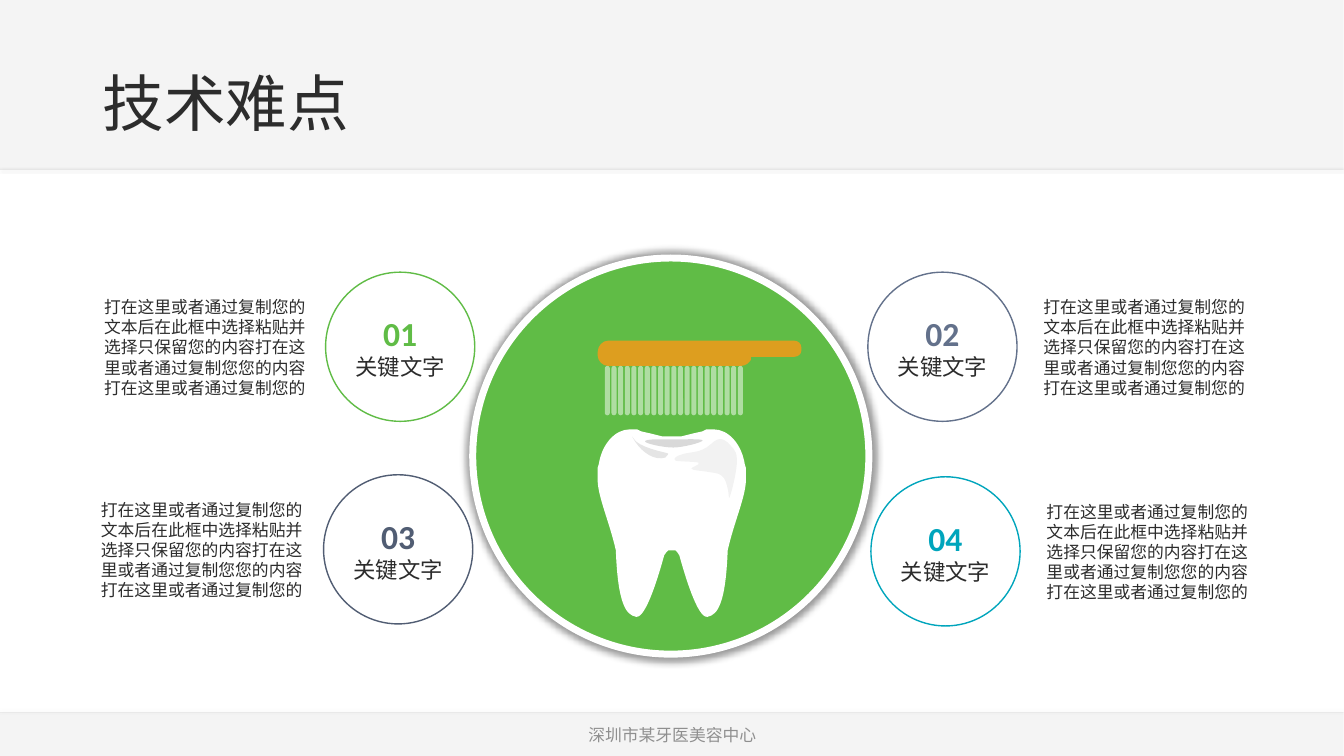
from dataclasses import dataclass

from lxml import etree
from pptx import Presentation
from pptx.dml.color import RGBColor
from pptx.enum.shapes import MSO_CONNECTOR, MSO_SHAPE
from pptx.enum.text import MSO_ANCHOR, MSO_AUTO_SIZE, PP_ALIGN
from pptx.oxml.ns import qn
from pptx.util import Pt

PX = 9144
RECT, OVAL, ROUNDED = MSO_SHAPE.RECTANGLE, MSO_SHAPE.OVAL, MSO_SHAPE.ROUNDED_RECTANGLE
STRAIGHT = MSO_CONNECTOR.STRAIGHT
MIDDLE, BOTTOM = MSO_ANCHOR.MIDDLE, MSO_ANCHOR.BOTTOM
GROW = MSO_AUTO_SIZE.SHAPE_TO_FIT_TEXT
LEFT, CENTER, RIGHT = PP_ALIGN.LEFT, PP_ALIGN.CENTER, PP_ALIGN.RIGHT


@dataclass(frozen=True)
class Theme:
    """Colours, fonts and type sizes of the deck."""
    ink: str = "2C2C2C"
    white: str = "FFFFFF"
    black: str = "000000"
    green: str = "60BC46"
    slate: str = "63718B"
    navy: str = "515D73"
    teal: str = "00A5BC"
    orange: str = "DD9E1F"
    latin: str = "Calibri"
    asian: str = "Noto Sans CJK SC"
    title: int = 44
    number: int = 24
    keyword: int = 16
    body: int = 12


THEME = Theme()
CAPTION = "打在这里或者通过复制您的文本后在此框中选择粘贴并选择只保留您的内容打在这里或者通过复制您您的内容打在这里或者通过复制您的"
CARDS = [
    ("01", THEME.green, (89, 270, 382, 148), True),
    ("02", THEME.slate, (861, 270, 384, 148), False),
    ("03", THEME.navy, (86, 471, 383, 148), True),
    ("04", THEME.teal, (864, 473, 384, 148), False),
]
HANDLE = [
    (10, 0), (195, 0), (199, 0, 202, 3, 202, 7), (202, 10), (202, 13, 199, 16, 195, 16),
    (152, 16), (152, 19), (150, 22, 147, 25, 142, 25), (10, 25), (5, 25, 0, 20, 0, 15),
    (0, 11), (0, 5, 5, 0, 10, 0),
]
TOOTH_HALF = [
    (74, 7), (64, 7), (52, 4), (43, 2), (39, 0), (37, 0, 35, 0, 32, 0),
    (17, 0, 4, 15, 1, 35), (0, 38), (0, 52), (1, 69, 12, 93, 18, 120),
    (20, 173, 28, 184, 38, 186), (48, 188, 61, 143, 66, 125), (68, 122), (70, 120), (74, 120),
]
TOOTH_SHADES = [
    (10, [(34, 7), (38, 12), (48, 20, 69, 23, 70, 24), (71, 24, 67, 28, 67, 28),
          (57, 31, 45, 24, 37, 12)]),
    (15, [(47, 12), (47, 9, 65, 10, 75, 10), (84, 10, 104, 9, 104, 11),
          (104, 13, 84, 18, 75, 18), (65, 18, 47, 14, 47, 12)]),
    (5, [(83, 25), (88, 23, 98, 23, 104, 20), (110, 18, 115, 11, 119, 10),
         (123, 9, 125, 10, 129, 13), (132, 17, 138, 20, 138, 29),
         (139, 38, 133, 62, 131, 67), (130, 72, 130, 62, 129, 59),
         (128, 55, 127, 49, 123, 46), (120, 43, 113, 43, 108, 42),
         (103, 41, 94, 41, 93, 39), (91, 38, 103, 35, 100, 33),
         (97, 32, 79, 32, 77, 31), (74, 29, 79, 26, 83, 25)]),
]


def emu(*lengths):
    """Turn px lengths into EMU."""
    return [round(length * PX) for length in lengths]


def set_alpha(element, percent):
    """Make the colours found inside an element partly transparent."""
    for colour in element.iter(qn("a:srgbClr")):
        etree.SubElement(colour, qn("a:alpha"), val=str(percent * 1000))


def set_effect(shape, shadow=None):
    """Replace the inherited effect by a shadow (alpha, blur, distance, angle, scale) or by none."""
    effects = etree.SubElement(shape._element.spPr, qn("a:effectLst"))
    if shadow:
        alpha, blur, distance, angle, scale = shadow
        outer = etree.SubElement(
            effects, qn("a:outerShdw"), blurRad=str(Pt(blur)), dist=str(Pt(distance)),
            dir=str(angle * 60000), sx=str(scale * 1000), sy=str(scale * 1000),
            algn="ctr", rotWithShape="0")
        etree.SubElement(outer, qn("a:srgbClr"), val=THEME.black)
        set_alpha(outer, alpha)


def paint(shape, fill, alpha=100, line=None, width=1, shadow=None):
    """Give a shape its fill, outline and shadow."""
    shape.fill.solid()
    shape.fill.fore_color.rgb = RGBColor.from_string(fill)
    if alpha < 100:
        set_alpha(shape._element.spPr, alpha)
    if line:
        shape.line.color.rgb = RGBColor.from_string(line)
        shape.line.width = Pt(width)
    else:
        shape.line.fill.background()
    set_effect(shape, shadow)
    return shape


def write(frame, spans, align, anchor, alpha=100):
    """Write one paragraph for each (text, size, colour, bold) span."""
    frame.word_wrap = True
    frame.vertical_anchor = anchor
    for index, (text, size, colour, bold) in enumerate(spans):
        para = frame.add_paragraph() if index else frame.paragraphs[0]
        para.alignment = align
        span = para.add_run()
        span.text = text
        span.font.size, span.font.bold, span.font.name = Pt(size), bold, THEME.latin
        span.font.color.rgb = RGBColor.from_string(colour)
        etree.SubElement(span.font._element, qn("a:ea"), typeface=THEME.asian)
        if alpha < 100:
            set_alpha(span.font._element, alpha)


def add_text(page, box, spans, align, anchor, alpha=100):
    """Place a text box and return its frame."""
    frame = page.shapes.add_textbox(*emu(*box)).text_frame
    write(frame, spans, align, anchor, alpha)
    return frame


def mirror(outline, width):
    """Return the outline walked backwards and flipped from left to right."""
    flat = [[part[i:i + 2] for i in range(0, len(part), 2)] for part in outline]
    flipped = []
    for before, part in zip(flat[-2::-1], flat[:0:-1]):
        nodes = part[-2::-1] + before[-1:]
        flipped.append(tuple(value for x, y in nodes for value in (width - x, y)))
    return flipped


def add_outline(group, origin, outline, fill, alpha=100):
    """Draw a filled closed outline of lines and cubic curves relative to an origin."""
    left, top = origin
    ends = [emu(left + part[-2], top + part[-1]) for part in outline]
    builder = group.shapes.build_freeform(*ends[0], scale=1.0)
    builder.add_line_segments(ends[1:], close=True)
    shape = paint(builder.convert_to_shape(), fill, alpha)
    first_x, first_y = (min(axis) for axis in zip(*ends))
    segments = list(shape._element.iter(qn("a:lnTo")))
    for segment, part in zip(segments, outline[1:]):
        if len(part) == 6:
            curve = etree.Element(qn("a:cubicBezTo"))
            for x, y in zip(part[::2], part[1::2]):
                across, down = emu(left + x, top + y)
                etree.SubElement(curve, qn("a:pt"), x=str(across - first_x), y=str(down - first_y))
            segment.getparent().replace(segment, curve)


def add_band(page, box, edge, shadow):
    """Draw a pale band with a thin shadowed line at the given height."""
    left, top, width, height = box
    paint(page.shapes.add_shape(RECT, *emu(*box)), THEME.ink, 5)
    rule = page.shapes.add_connector(STRAIGHT, *emu(left, edge, left + width, edge))
    rule.line.color.rgb = RGBColor.from_string(THEME.ink)
    rule.line.width = Pt(0.5)
    set_alpha(rule._element.spPr, 10)
    set_effect(rule, shadow)


def add_header(page, box):
    """Draw the header band and its title."""
    left, top, width, height = box
    add_band(page, box, top + height, (100, 2, 1, 90, 100))
    title = [("技术难点", THEME.title, THEME.ink, False)]
    frame = add_text(page, (left + 92, top + 41, 1149, 103), title, LEFT, BOTTOM)
    frame.paragraphs[0].line_spacing = 0.9


def add_footer(page, box):
    """Draw the footer band and its centred line."""
    left, top, width, height = box
    add_band(page, box, top, (40, 2, 1, 270, 100))
    line = [("深圳市某牙医美容中心", THEME.body, THEME.ink, False)]
    add_text(page, (left + 442, top + 2, 450, 40), line, CENTER, MIDDLE, 50)


def add_toothbrush(page, origin):
    """Draw the handle and its evenly spaced bristles."""
    left, top = origin
    group = page.shapes.add_group_shape()
    add_outline(group, origin, HANDLE, THEME.orange)
    for index in range(21):
        box = (left + 7 + index * 132 / 20, top + 25, 5, 49)
        bristle = paint(group.shapes.add_shape(ROUNDED, *emu(*box)), THEME.white, 50)
        bristle.adjustments[0] = 0.5


def add_tooth(page, origin):
    """Draw the mirrored tooth and its shading."""
    group = page.shapes.add_group_shape()
    add_outline(group, origin, TOOTH_HALF + mirror(TOOTH_HALF, 147), THEME.white)
    for alpha, outline in TOOTH_SHADES:
        add_outline(group, origin, outline, THEME.black, alpha)


def add_medallion(page, box):
    """Draw the central disc with the toothbrush and tooth."""
    left, top, width, height = box
    disc = page.shapes.add_shape(OVAL, *emu(*box))
    paint(disc, THEME.green, line=THEME.white, width=5, shadow=(40, 5, 0, 0, 102))
    add_toothbrush(page, (left + 124, top + 82))
    add_tooth(page, (left + 124, top + 170))


def add_card(page, box, number, colour, circle_right):
    """Draw a numbered circle with its caption beside it."""
    left, top, width, height = box
    circle_left = left + width - height if circle_right else left
    caption_left = left if circle_right else left + width - 224
    circle = page.shapes.add_shape(OVAL, *emu(circle_left, top, height, height))
    paint(circle, THEME.white, line=colour)
    circle.text_frame.margin_left = circle.text_frame.margin_right = 0
    label = [(number, THEME.number, colour, True),
             ("关键文字", THEME.keyword, THEME.ink, False)]
    write(circle.text_frame, label, CENTER, MIDDLE)
    caption = [(CAPTION, THEME.body, THEME.ink, False)]
    frame = add_text(page, (caption_left, top + 19, 224, 111), caption, RIGHT, MIDDLE)
    frame.auto_size = GROW
    frame.paragraphs[0].space_after = Pt(10)


def main():
    """Build the slide and save the deck."""
    deck = Presentation()
    deck.slide_width, deck.slide_height = emu(4000 / 3, 750)
    page = deck.slides.add_slide(deck.slide_layouts[6])
    add_header(page, (0, 0, 1333, 168))
    add_footer(page, (0, 707, 1333, 43))
    add_medallion(page, (469, 256, 393, 393))
    for number, colour, box, circle_right in CARDS:
        add_card(page, box, number, colour, circle_right)
    deck.save("out.pptx")


if __name__ == "__main__":
    main()
